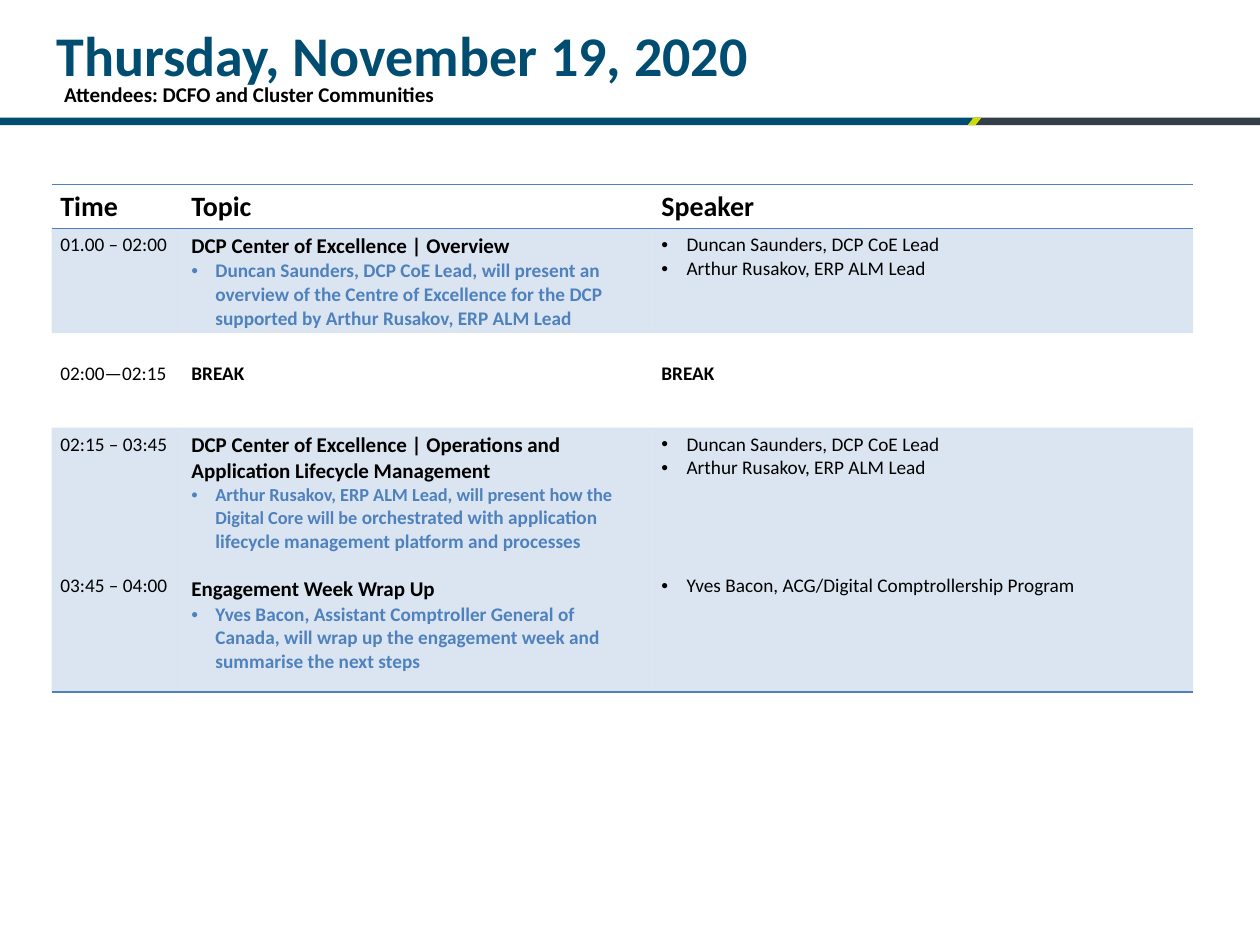
"""Build the agenda slide for the third engagement day."""
from dataclasses import dataclass
from typing import NamedTuple

from lxml.etree import SubElement
from pptx import Presentation
from pptx.dml.color import RGBColor
from pptx.enum.shapes import MSO_SHAPE as Preset
from pptx.enum.text import MSO_ANCHOR as Anchor
from pptx.oxml.ns import qn
from pptx.util import Inches, Pt


@dataclass(frozen=True)
class Theme:
    font: str = "Calibri"
    navy: str = "004D71"
    slate: str = "333E48"
    lime: str = "CFDE00"
    blue: str = "4F81BD"
    black: str = "000000"
    tint: int = 20
    title: float = 32
    heading: float = 16
    topic: float = 12
    body: float = 11
    tight: float = 10.5
    blank_line: float = 13.4
    plain_table: str = "{2D5ABB26-0587-4C30-8999-92F81FD0307C}"


class Box(NamedTuple):
    left: float
    top: float
    width: float
    height: float


class Band(NamedTuple):
    preset: Preset
    box: Box
    color: str


@dataclass(frozen=True)
class Line:
    text: str
    size: float = Theme.body
    color: str = Theme.black
    bold: bool = False
    indent: float = 0
    skipped: int = 0
    ending: str = ""


@dataclass(frozen=True)
class Row:
    height: float
    cells: tuple[tuple[Line, ...], ...]
    tinted: bool = False
    edges: tuple[str, ...] = ()
    lowered: float = 0


THEME = Theme()
WIDTH, HEIGHT = Inches(10), Inches(7.5)
COLUMN, ROW = WIDTH / 100, HEIGHT / 100
AGENDA = Box(4.1, 19.55, 90.6, 53.6)
AGENDA_COLUMNS = (10.4, 37.3, 42.9)
BANDS = (
    Band(Preset.RECTANGLE, Box(0, 12.45, 77.2, 0.8), THEME.navy),
    Band(Preset.RECTANGLE, Box(77.2, 12.45, 22.8, 0.8), THEME.slate),
    Band(Preset.PARALLELOGRAM, Box(76.8, 12.45, 1.1, 0.8), THEME.lime),
)


def heading(text: str) -> tuple[Line, ...]:
    """Return a column heading."""
    return (Line(text, THEME.heading, bold=True),)


def topic(text: str, skipped: int = 0) -> Line:
    """Return a session name."""
    return Line(text, THEME.topic, bold=True, skipped=skipped)


def detail(text: str, size: float = THEME.body, ending: str = "") -> Line:
    """Return a bulleted session summary."""
    return Line(text, size, THEME.blue, True, 0.19, ending=ending)


def speaker(text: str, skipped: int = 0) -> Line:
    """Return a bulleted speaker."""
    return Line(text, indent=0.2, skipped=skipped)


LEADS = (speaker("Duncan Saunders, DCP CoE Lead"), speaker("Arthur Rusakov, ERP ALM Lead"))
BREAK = (Line("BREAK", bold=True),)
ROWS = (
    Row(4.6, (heading("Time"), heading("Topic"), heading("Speaker")), edges=("T", "B")),
    Row(11, (
        (Line("01.00 – 02:00"),),
        (topic("DCP Center of Excellence | Overview"),
         detail("Duncan Saunders, DCP CoE Lead, will present an overview of the Centre of "
                "Excellence for the DCP supported by Arthur Rusakov, ERP ALM Lead")),
        LEADS), tinted=True),
    Row(10, ((Line("02:00—02:15"),), BREAK, BREAK), lowered=0.19),
    Row(28, (
        (Line("02:15 – 03:45"), Line("03:45 – 04:00", skipped=5)),
        (topic("DCP Center of Excellence | Operations and Application Lifecycle Management"),
         detail("Arthur Rusakov, ERP ALM Lead, will present how the Digital Core will be ",
                THEME.tight,
                "orchestrated with application lifecycle management platform and processes"),
         topic("Engagement Week Wrap Up", skipped=1),
         detail("Yves Bacon, Assistant Comptroller General of Canada, will wrap up the "
                "engagement week and summarise the next steps")),
        (*LEADS, speaker("Yves Bacon, ACG/Digital Comptrollership Program", skipped=4))),
        tinted=True, edges=("B",)),
)


def place(box: Box) -> tuple[int, int, int, int]:
    """Turn grid columns and rows into slide lengths."""
    return (round(box.left * COLUMN), round(box.top * ROW),
            round(box.width * COLUMN), round(box.height * ROW))


def write(paragraph, text: str, *, size: float, color: str, bold: bool) -> None:
    """Add one formatted run to a paragraph."""
    run = paragraph.add_run()
    run.text = text
    run.font.name, run.font.size, run.font.bold = THEME.font, Pt(size), bold
    run.font.color.rgb = RGBColor.from_string(color)


def write_lines(frame, lines: tuple[Line, ...]) -> None:
    """Fill a text frame with lines, bulleted where they are indented."""
    for number, line in enumerate(lines):
        paragraph = frame.add_paragraph() if number else frame.paragraphs[0]
        if line.skipped:
            paragraph.space_before = Pt(line.skipped * THEME.blank_line)
        if line.indent:
            properties = paragraph._p.get_or_add_pPr()
            properties.set("marL", str(Inches(line.indent)))
            properties.set("indent", str(-Inches(line.indent)))
            SubElement(properties, qn("a:buFont"), typeface="Arial")
            SubElement(properties, qn("a:buChar"), char="•")
        write(paragraph, line.text, size=line.size, color=line.color, bold=line.bold)
        if line.ending:
            write(paragraph, line.ending, size=THEME.body, color=line.color, bold=line.bold)


def draw_text(slide, box: Box, line: Line, anchor: Anchor) -> None:
    """Draw a text box with one line."""
    frame = slide.shapes.add_textbox(*place(box)).text_frame
    frame.word_wrap = True
    frame.vertical_anchor = anchor
    write_lines(frame, (line,))


def draw_band(slide, band: Band) -> None:
    """Draw one part of the divider."""
    shape = slide.shapes.add_shape(band.preset, *place(band.box))
    shape.shadow.inherit = False
    shape.fill.solid()
    shape.fill.fore_color.rgb = RGBColor.from_string(band.color)
    shape.line.fill.background()
    if band.preset == Preset.PARALLELOGRAM:
        shape.adjustments[0] = 0.8


def fill_cell(cell, row: Row, lines: tuple[Line, ...]) -> None:
    """Write a cell and set its margins, edges and tint."""
    cell.margin_left = cell.margin_right = Inches(0.07)
    cell.margin_top, cell.margin_bottom = Inches(0.04 + row.lowered), Inches(0.04)
    write_lines(cell.text_frame, lines)
    properties = cell._tc.get_or_add_tcPr()
    for side in row.edges:
        edge = SubElement(properties, qn(f"a:ln{side}"), w=str(Pt(1)))
        SubElement(SubElement(edge, qn("a:solidFill")), qn("a:srgbClr"), val=THEME.blue)
    if row.tinted:
        cell.fill.solid()
        cell.fill.fore_color.rgb = RGBColor.from_string(THEME.blue)
        color = properties.find(qn("a:solidFill")).find(qn("a:srgbClr"))
        SubElement(color, qn("a:alpha"), val=str(THEME.tint * 1000))
    else:
        cell.fill.background()


def draw_agenda(slide) -> None:
    """Draw the agenda table."""
    table = slide.shapes.add_table(len(ROWS), len(AGENDA_COLUMNS), *place(AGENDA)).table
    table.horz_banding = False
    table._tbl.tblPr.find(qn("a:tableStyleId")).text = THEME.plain_table
    for column, width in zip(table.columns, AGENDA_COLUMNS):
        column.width = round(width * COLUMN)
    for table_row, row in zip(table.rows, ROWS):
        table_row.height = round(row.height * ROW)
        for cell, lines in zip(table_row.cells, row.cells):
            fill_cell(cell, row, lines)


def main() -> None:
    """Build and save the slide."""
    deck = Presentation()
    deck.slide_width, deck.slide_height = WIDTH, HEIGHT
    slide = deck.slides.add_slide(deck.slide_layouts[6])
    for band in BANDS:
        draw_band(slide, band)
    draw_text(slide, Box(4.1, 8, 57.5, 4),
              Line("Attendees: DCFO and Cluster Communities", THEME.topic, bold=True), Anchor.TOP)
    draw_agenda(slide)
    draw_text(slide, Box(3.5, 1.75, 90, 8.15),
              Line("Thursday, November 19, 2020", THEME.title, THEME.navy, True), Anchor.BOTTOM)
    deck.save("out.pptx")


if __name__ == "__main__":
    main()
